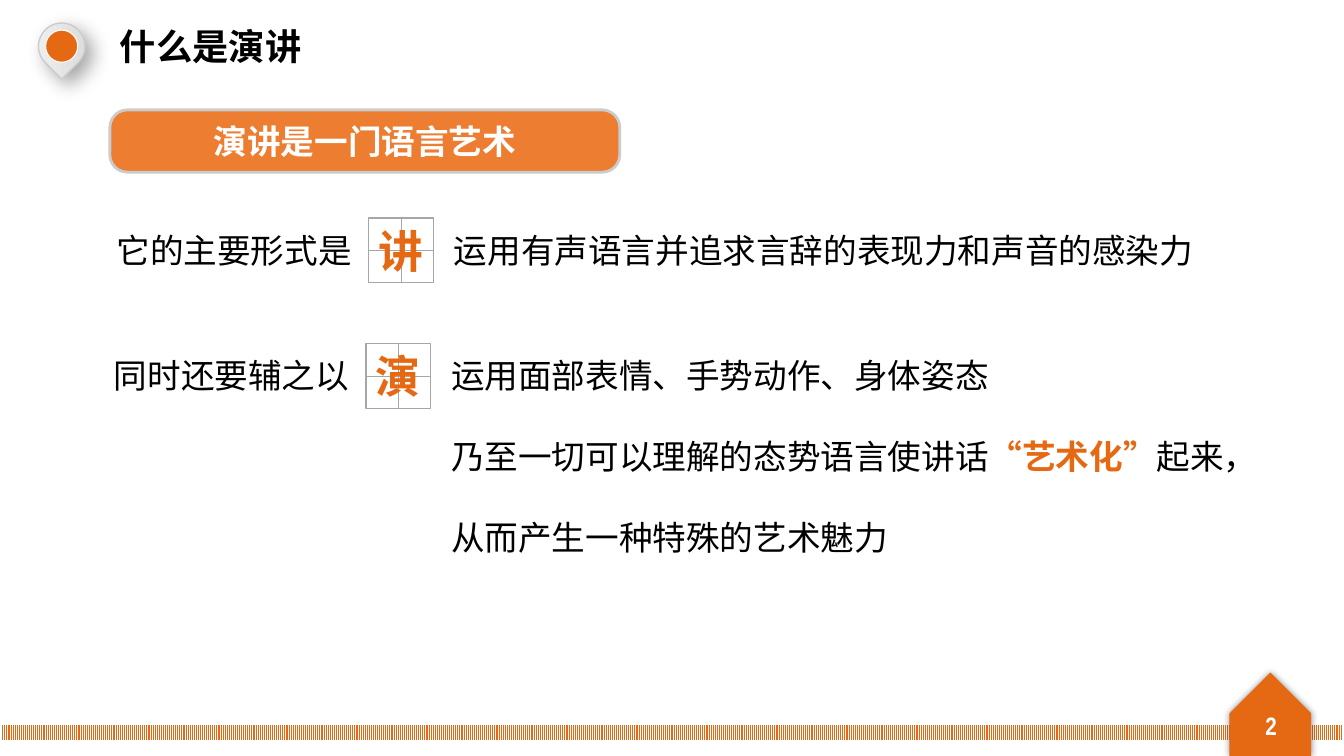
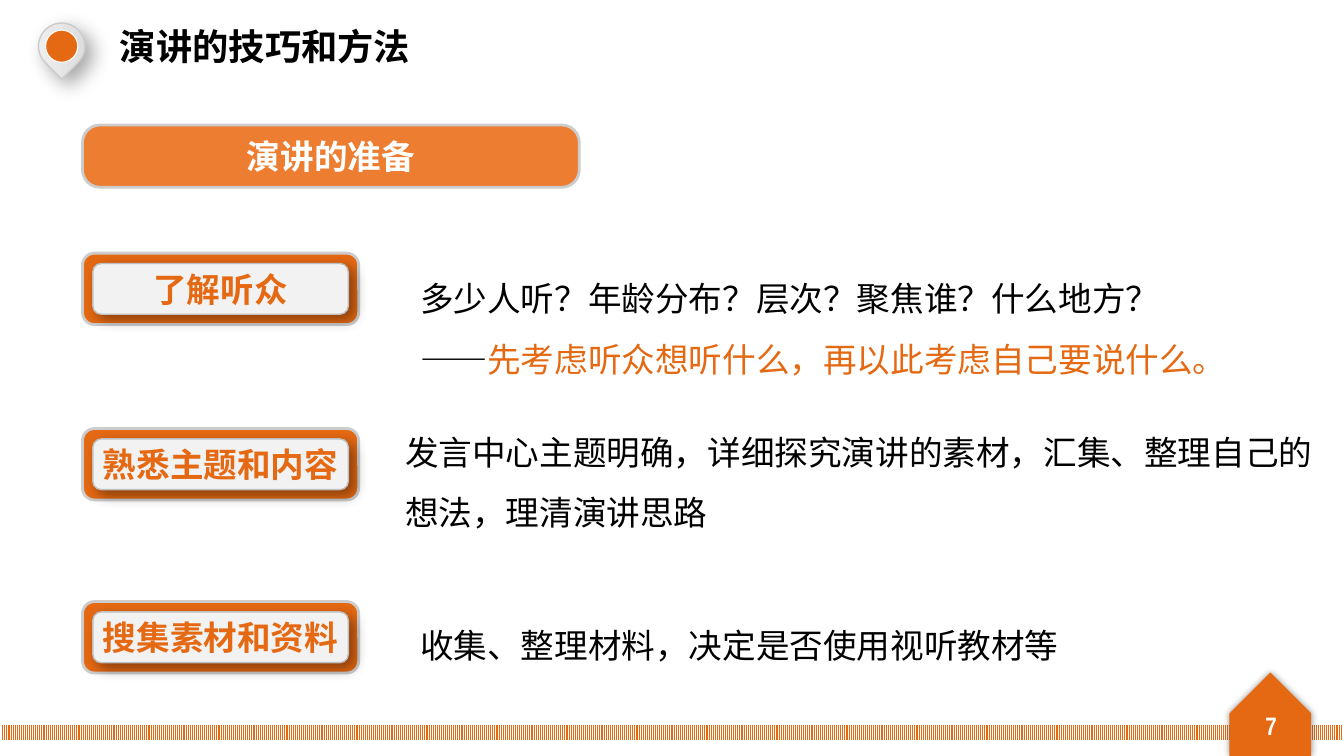
from lxml import etree
from pptx import Presentation
from pptx import util as u
from pptx.dml.color import RGBColor
from pptx.enum import dml, shapes, text
from pptx.oxml import ns

ORANGE = RGBColor(0xE5, 0x69, 0x13)
PILL_ORANGE = RGBColor(0xED, 0x7D, 0x31)
WHITE = RGBColor(0xFF, 0xFF, 0xFF)
BLACK = RGBColor(0, 0, 0)
PANEL = RGBColor(0xF2, 0xF2, 0xF2)
PIN_DARK = RGBColor(0xD9, 0xD9, 0xD9)
EDGE = RGBColor(0xCC, 0xCC, 0xCC)
PANEL_EDGE = RGBColor(0xBF, 0xBF, 0xBF)
GRID = RGBColor(0xA6, 0xA6, 0xA6)

FONT = "Arial Narrow"
BODY_SIZE = 24
WIDTH, HEIGHT = 33.87, 19.05
SHAPE = shapes.MSO_SHAPE


def style(font, size, color, bold=False):
    font.name = FONT
    font.size = u.Pt(size)
    font.color.rgb = color
    font.bold = bold


def add_shadow(shape, alpha, blur, distance, angle):
    effects = shape._element.spPr.find(ns.qn("a:effectLst"))
    outer = etree.SubElement(
        effects, ns.qn("a:outerShdw"), blurRad=str(u.Pt(blur)),
        dist=str(u.Pt(distance)), dir=str(angle * 60000), algn="ctr", rotWithShape="0")
    color = etree.SubElement(outer, ns.qn("a:srgbClr"), val="000000")
    etree.SubElement(color, ns.qn("a:alpha"), val=str(alpha * 1000))


def add_shape(slide, kind, box, fill=None, line=None, line_width=1.0):
    """Add a preset shape; box is left, top, width, height in centimetres."""
    shape = slide.shapes.add_shape(kind, *map(u.Cm, box))
    shape.shadow.inherit = False
    if fill is None:
        shape.fill.background()
    else:
        shape.fill.solid()
        shape.fill.fore_color.rgb = fill
    if line is None:
        shape.line.fill.background()
    else:
        shape.line.color.rgb = line
        shape.line.width = u.Pt(line_width)
    return shape


def add_line(slide, *ends):
    line = slide.shapes.add_connector(shapes.MSO_CONNECTOR.STRAIGHT, *map(u.Cm, ends))
    etree.SubElement(line._element.spPr, ns.qn("a:effectLst"))
    line.line.color.rgb = GRID
    line.line.width = u.Pt(0.5)


def write_centred(shape, words, size, color):
    frame = shape.text_frame
    frame.word_wrap = True
    frame.margin_left = frame.margin_right = frame.margin_top = frame.margin_bottom = 0
    frame.vertical_anchor = text.MSO_ANCHOR.MIDDLE
    paragraph = frame.paragraphs[0]
    paragraph.text = words
    paragraph.alignment = text.PP_ALIGN.CENTER
    style(paragraph.font, size, color, bold=True)


def add_text(slide, box, paragraphs, line_spacing=1.0, gap=0):
    """Add body text; each paragraph is a list of (words, color, bold) runs."""
    frame = slide.shapes.add_textbox(*map(u.Cm, box)).text_frame
    frame.word_wrap = True
    for index, runs in enumerate(paragraphs):
        paragraph = frame.add_paragraph() if index else frame.paragraphs[0]
        paragraph.line_spacing = line_spacing
        if index and gap:
            paragraph.space_before = u.Pt(gap)
        for words, color, bold in runs:
            run = paragraph.add_run()
            run.text = words
            style(run.font, BODY_SIZE, color, bold)


def plain(words):
    return [(words, BLACK, False)]


def add_pin(slide, left, top):
    size, inset = 1.17, 0.18
    drop = add_shape(slide, SHAPE.TEAR, (left, top, size, size), PANEL, EDGE)
    drop.rotation = 135
    drop.fill.gradient()
    drop.fill.gradient_angle = 315
    for stop, color in zip(drop.fill.gradient_stops, (PIN_DARK, PANEL)):
        stop.color.rgb = color
    add_shadow(drop, 35, 14, 7, 45)
    dot = size - 2 * inset
    add_shape(slide, SHAPE.OVAL, (left + inset, top + inset, dot, dot), ORANGE, WHITE, 0.75)


def add_footer(slide, number):
    strip = add_shape(slide, SHAPE.RECTANGLE, (0, 18.26, WIDTH, 0.41), line=WHITE, line_width=0.75)
    strip.fill.patterned()
    strip.fill.pattern = dml.MSO_PATTERN.NARROW_VERTICAL
    strip.fill.fore_color.rgb = ORANGE
    strip.fill.back_color.rgb = WHITE
    badge = add_shape(slide, SHAPE.PENTAGON, (30.96, 16.97, 2.11, 2.06), ORANGE)
    badge.rotation = 270
    add_shadow(badge, 40, 5, 0, 0)
    label = slide.shapes.add_textbox(*map(u.Cm, (31.17, 17.53, 1.73, 1.5)))
    write_centred(label, str(number), 18, WHITE)


def add_title(slide, words):
    title = slide.shapes.title
    title.left, title.top, title.width, title.height = map(u.Cm, (2.77, 0.61, 12.98, 1.09))
    frame = title.text_frame
    frame.auto_size = text.MSO_AUTO_SIZE.NONE
    frame.vertical_anchor = text.MSO_ANCHOR.MIDDLE
    paragraph = frame.paragraphs[0]
    paragraph.text = words
    paragraph.alignment = text.PP_ALIGN.LEFT
    style(paragraph.font, 25.9, BLACK, bold=True)


def new_slide(presentation, title, number):
    slide = presentation.slides.add_slide(presentation.slide_layouts[5])
    add_pin(slide, 0.97, 0.58)
    add_footer(slide, number)
    add_title(slide, title)
    return slide


def add_pill(slide, left, top, width, words):
    pill = add_shape(slide, SHAPE.ROUNDED_RECTANGLE, (left, top, width, 1.57), PILL_ORANGE, EDGE, 2)
    pill.adjustments[0] = 0.28
    write_centred(pill, words, BODY_SIZE, WHITE)


def add_character_cell(slide, left, top, character):
    size = 1.63
    box = (left, top, size, size)
    add_shape(slide, SHAPE.RECTANGLE, box, line=GRID)
    add_line(slide, left, top + size / 2, left + size, top + size / 2)
    add_line(slide, left + size / 2, top, left + size / 2, top + size)
    write_centred(slide.shapes.add_textbox(*map(u.Cm, box)), character, 32, ORANGE)


def add_character_row(slide, left, top, intro, character, explanation):
    text_top = top + 0.17
    add_text(slide, (left, text_top, 6.5, 1.27), [plain(intro)])
    add_character_cell(slide, left + 6.6, top, character)
    add_text(slide, (left + 8.5, text_top, 21.03, 1.27), explanation, gap=28.8)


def add_tag(slide, left, top, words):
    width, height, inset = 6.96, 1.8, 0.26
    add_shape(slide, SHAPE.ROUNDED_RECTANGLE, (left, top, width, height), ORANGE, EDGE, 2)
    panel = add_shape(
        slide, SHAPE.ROUNDED_RECTANGLE,
        (left + inset, top + inset, width - 2 * inset, height - 2 * inset), PANEL, PANEL_EDGE)
    add_shadow(panel, 40, 10, 5, 45)
    write_centred(panel, words, BODY_SIZE, ORANGE)


def build_definition_slide(presentation):
    slide = new_slide(presentation, "什么是演讲", 2)
    add_pill(slide, 2.77, 2.77, 12.85, "演讲是一门语言艺术")
    add_character_row(slide, 2.69, 5.49, "它的主要形式是", "讲",
                      [plain("运用有声语言并追求言辞的表现力和声音的感染力")])
    add_character_row(slide, 2.62, 8.66, "同时还要辅之以", "演", [
        plain("运用面部表情、手势动作、身体姿态"),
        [("乃至一切可以理解的态势语言使讲话", BLACK, False),
         ("“艺术化”", ORANGE, True),
         ("起来，", BLACK, False)],
        plain("从而产生一种特殊的艺术魅力"),
    ])


def build_preparation_slide(presentation):
    slide = new_slide(presentation, "演讲的技巧和方法", 7)
    left = 2.08
    add_pill(slide, left, 3.15, 12.52, "演讲的准备")
    steps = [
        ("了解听众", 6.38, (10.34, 6.38, 21.03, 3.15), [
            plain("多少人听？年龄分布？层次？聚焦谁？什么地方？"),
            [("——", BLACK, False),
             ("先考虑听众想听什么，再以此考虑自己要说什么。", ORANGE, False)]]),
        ("熟悉主题和内容", 10.8, (9.96, 10.24, 23.9, 3.15), [
            plain("发言中心主题明确，详细探究演讲的素材，汇集、整理自己的想法，理清演讲思路")]),
        ("搜集素材和资料", 15.16, (10.34, 15.11, 16.76, 1.6), [
            plain("收集、整理材料，决定是否使用视听教材等")]),
    ]
    for name, top, note_box, note in steps:
        add_tag(slide, left, top, name)
        add_text(slide, note_box, note, line_spacing=1.5)


def main():
    presentation = Presentation()
    presentation.slide_width = u.Cm(WIDTH)
    presentation.slide_height = u.Cm(HEIGHT)
    build_definition_slide(presentation)
    build_preparation_slide(presentation)
    presentation.save("out.pptx")


if __name__ == "__main__":
    main()
